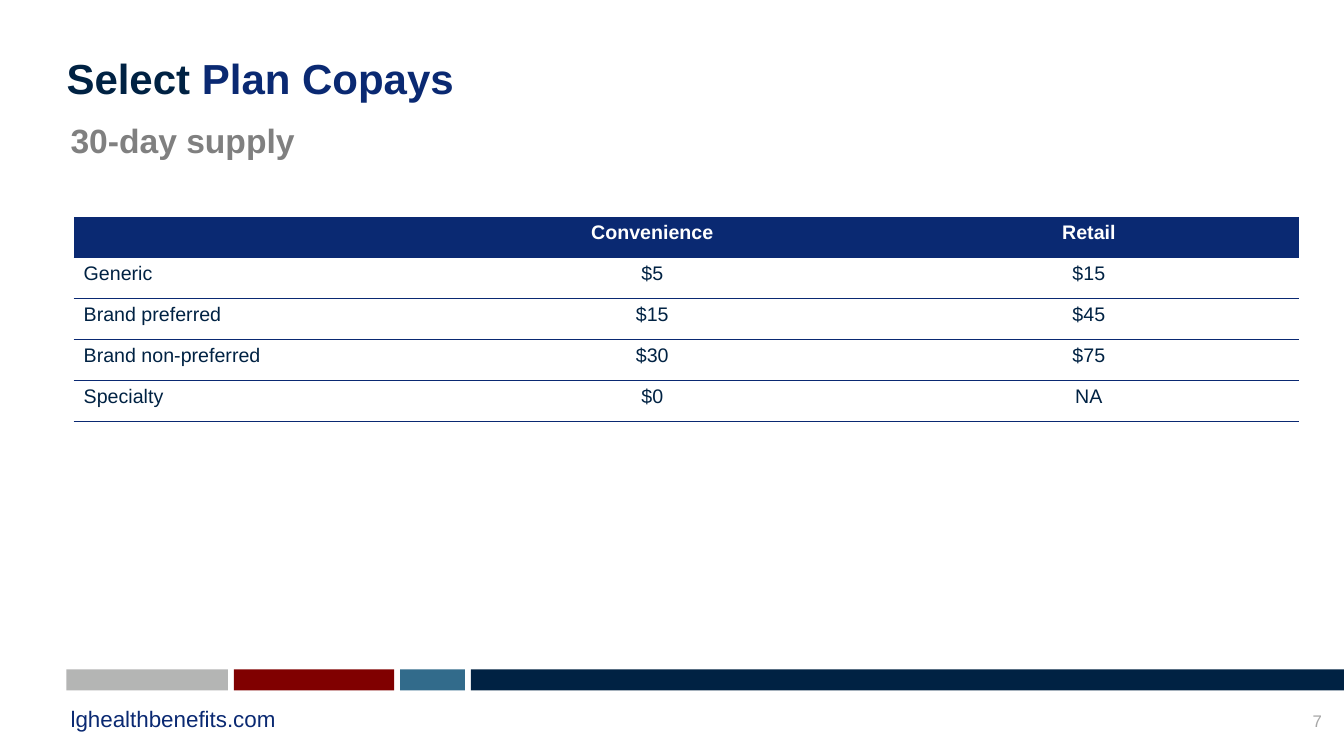
from lxml import etree
from pptx import Presentation
from pptx.dml.color import RGBColor
from pptx.enum.shapes import MSO_SHAPE
from pptx.enum.text import MSO_ANCHOR, PP_ALIGN
from pptx.oxml import parse_xml
from pptx.oxml.ns import nsdecls, qn
from pptx.util import Inches, Pt

RECT = MSO_SHAPE.RECTANGLE
TOP, BOTTOM = MSO_ANCHOR.TOP, MSO_ANCHOR.BOTTOM
LEFT, CENTER, RIGHT = PP_ALIGN.LEFT, PP_ALIGN.CENTER, PP_ALIGN.RIGHT
NAVY, BLUE, WHITE = "002243", "0A2972", "FFFFFF"
PLAIN_TABLE = "{2D5ABB26-0587-4C30-8999-92F81FD0307C}"


def color(value):
    return RGBColor.from_string(value)


def write(tf, runs, size, bold=False, align=LEFT):
    p = tf.paragraphs[0]
    p.alignment = align
    for text, hex_color in runs:
        r = p.add_run()
        r.text = text
        r.font.name = "Arial"
        r.font.size = Pt(size)
        r.font.bold = bold
        r.font.color.rgb = color(hex_color)


prs = Presentation()
prs.slide_width, prs.slide_height = Inches(13.33), Inches(7.5)
s = prs.slides.add_slide(prs.slide_layouts[5])

# Footer bars
for x, w, fill in [(0.66, 1.6, "B4B5B4"), (2.32, 1.59, "800000"),
                   (3.97, 0.64, "326B8B"), (4.67, 8.66, NAVY)]:
    sp = s.shapes.add_shape(RECT, Inches(x), Inches(6.64), Inches(w), Inches(0.21))
    sp.shadow.inherit = False
    sp.fill.solid()
    sp.fill.fore_color.rgb = color(fill)
    sp.line.fill.background()

# Title, subtitle, web address and page number
title = s.shapes.title
title.left, title.top = Inches(0.66), Inches(0.52)
title.width, title.height = Inches(12.11), Inches(0.5)
subtitle = s.shapes.add_textbox(Inches(0.7), Inches(1.19), Inches(12.03), Inches(0.4))
website = s.shapes.add_textbox(Inches(0.7), Inches(6.99), Inches(4.08), Inches(0.27))
page = s.shapes.add_textbox(Inches(12.77), Inches(7.05), Inches(0.34), Inches(0.2))

for sp, anchor, runs, size, bold, align in [
    (title, TOP, [("Select ", NAVY), ("Plan Copays", BLUE)], 30, True, LEFT),
    (subtitle, BOTTOM, [("30-day supply", "808080")], 24, True, LEFT),
    (website, BOTTOM, [("lghealthbenefits.com", BLUE)], 16, False, LEFT),
    (page, BOTTOM, [("7", "A6A6A6")], 12, False, RIGHT),
]:
    tf = sp.text_frame
    tf.word_wrap = True
    tf.vertical_anchor = anchor
    tf.margin_left = tf.margin_right = tf.margin_top = tf.margin_bottom = 0
    write(tf, runs, size, bold, align)

# Copay table
copays = [
    ("", "Convenience", "Retail"),
    ("Generic", "$5", "$15"),
    ("Brand preferred", "$15", "$45"),
    ("Brand non-preferred", "$30", "$75"),
    ("Specialty", "$0", "NA"),
]
table = s.shapes.add_table(len(copays), 3, Inches(0.73), Inches(2.15),
                           Inches(12.15), Inches(2.03)).table
table.horz_banding = False
table._tbl.tblPr.find(qn("a:tableStyleId")).text = PLAIN_TABLE
for column, w in zip(table.columns, (3.49, 4.5, 4.16)):
    column.width = Inches(w)

for i, row in enumerate(copays):
    header = i == 0
    for j, text in enumerate(row):
        cell = table.cell(i, j)
        cell.fill.solid()
        cell.fill.fore_color.rgb = color(BLUE if header else WHITE)
        if text:
            write(cell.text_frame, [(text, WHITE if header else NAVY)], 14,
                  header, CENTER if j else LEFT)
        # Rule under each row
        border = parse_xml(f'<a:lnB {nsdecls("a")} w="12700"/>')
        fill = etree.SubElement(border, qn("a:solidFill"))
        etree.SubElement(fill, qn("a:srgbClr"), val=BLUE)
        cell._tc.get_or_add_tcPr().insert(0, border)

prs.save("out.pptx")
